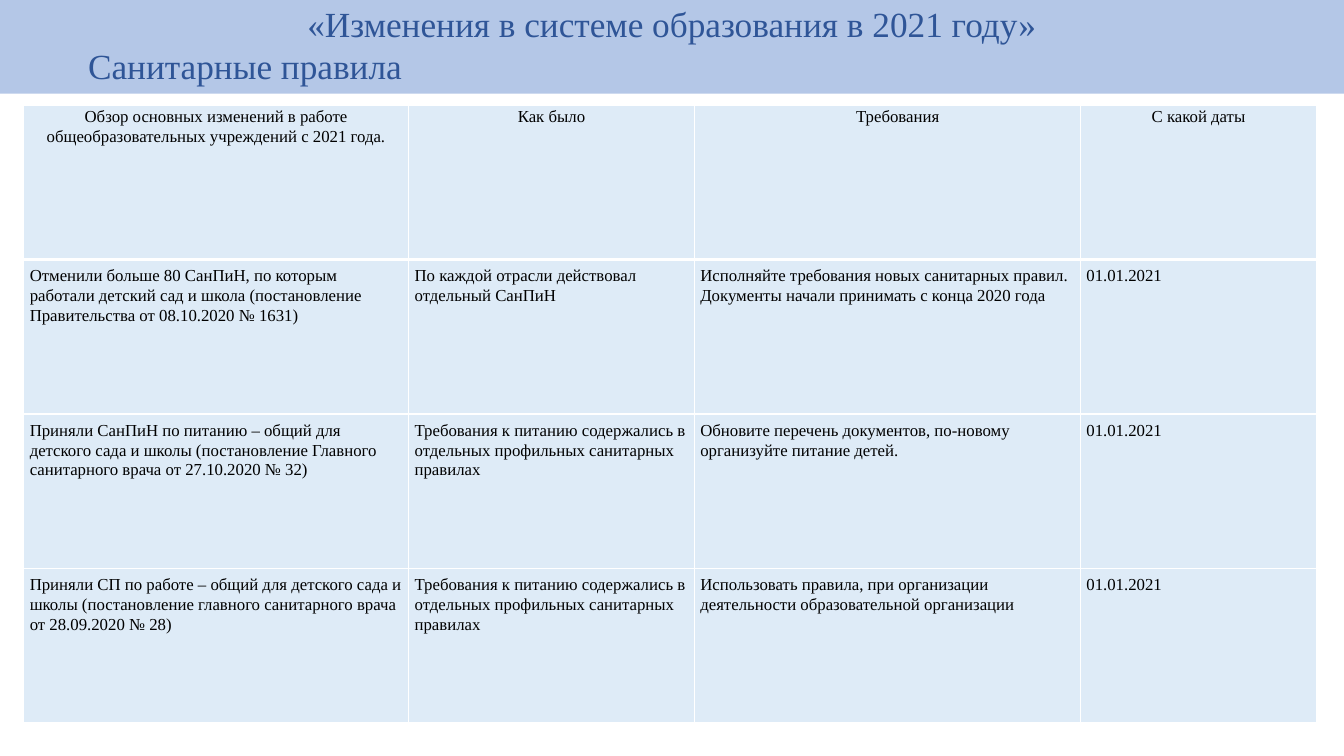
"""Builds a slide with a table of the 2021 changes to school sanitary rules."""
from lxml import etree
from pptx import Presentation
from pptx import util as u
from pptx.dml.color import RGBColor
from pptx.enum import shapes, text
from pptx.oxml.ns import qn

FONT = "Times New Roman"
BANNER, TITLE, CELL, BORDER, INK = "B4C7E7", "2F5597", "DEEBF7", "FFFFFF", "000000"
TITLE_LINES = [
    ("«Изменения в системе образования в 2021 году»", text.PP_ALIGN.CENTER, 0),
    ("Санитарные правила", text.PP_ALIGN.LEFT, 2.22),
]
HEADERS = [
    "Обзор основных изменений в работе общеобразовательных учреждений с 2021 года.",
    "Как было",
    "Требования",
    "С какой даты",
]
CHANGES = [
    ("Отменили больше 80 СанПиН, по которым работали детский сад и школа "
     "(постановление Правительства от 08.10.2020 № 1631)",
     "По каждой отрасли действовал отдельный СанПиН",
     "Исполняйте требования новых санитарных правил. Документы начали принимать с конца 2020 года",
     "01.01.2021"),
    ("Приняли СанПиН по питанию – общий для детского сада и школы "
     "(постановление Главного санитарного врача от 27.10.2020 № 32)",
     "Требования к питанию содержались в отдельных профильных санитарных правилах",
     "Обновите перечень документов, по-новому организуйте питание детей.",
     "01.01.2021"),
    ("Приняли СП по работе – общий для детского сада и школы "
     "(постановление главного санитарного врача от 28.09.2020 № 28)",
     "Требования к питанию содержались в отдельных профильных санитарных правилах",
     "Использовать правила, при организации деятельности образовательной организации",
     "01.01.2021"),
]
COLUMN_WIDTHS = [9.7, 7.2, 9.73, 5.95]
ROW_HEIGHT = 3.89
HEADER_INSET, BODY_INSET, SHIFTED_INSET = 0.03, 0.15, 0.55


def color(value):
    return RGBColor.from_string(value)


def fill(item, value):
    item.fill.solid()
    item.fill.fore_color.rgb = color(value)


def add_run(paragraph, words, size, value):
    run = paragraph.add_run()
    run.text = words
    run.font.name = FONT
    run.font.size = u.Pt(size)
    run.font.bold = False
    run.font.color.rgb = color(value)


def add_borders(cell, bottom):
    properties = cell._tc.get_or_add_tcPr()
    for side, width in (("L", 1), ("R", 1), ("T", 1), ("B", bottom)):
        line = etree.SubElement(properties, qn(f"a:ln{side}"), w=str(u.Pt(width)))
        solid = etree.SubElement(line, qn("a:solidFill"))
        etree.SubElement(solid, qn("a:srgbClr"), val=BORDER)


def add_banner(slide, width):
    shape = slide.shapes.add_shape(
        shapes.MSO_SHAPE.RECTANGLE, 0, u.Cm(-0.13), width, u.Cm(2.49))
    shape.shadow.inherit = False
    fill(shape, BANNER)
    shape.line.fill.background()
    frame = shape.text_frame
    frame.word_wrap = True
    frame.vertical_anchor = text.MSO_ANCHOR.MIDDLE
    frame.margin_left = frame.margin_right = frame.margin_top = frame.margin_bottom = 0
    for index, (words, alignment, indent) in enumerate(TITLE_LINES):
        paragraph = frame.add_paragraph() if index else frame.paragraphs[0]
        paragraph.alignment = alignment
        paragraph.line_spacing = u.Pt(30)
        paragraph._p.get_or_add_pPr().set("marL", str(u.Cm(indent)))
        add_run(paragraph, words, 25.2, TITLE)


def fill_cell(cell, words, is_header):
    inset = u.Cm(HEADER_INSET if is_header else BODY_INSET)
    cell.margin_left = cell.margin_right = cell.margin_top = cell.margin_bottom = inset
    add_borders(cell, 3 if is_header else 1)
    fill(cell, CELL)
    paragraph = cell.text_frame.paragraphs[0]
    paragraph.alignment = text.PP_ALIGN.CENTER if is_header else text.PP_ALIGN.LEFT
    paragraph.line_spacing = 1.07
    add_run(paragraph, words, 12, INK)


def add_changes_table(slide):
    rows = [HEADERS, *CHANGES]
    table = slide.shapes.add_table(
        len(rows), len(HEADERS), u.Cm(0.6), u.Cm(2.65),
        u.Cm(sum(COLUMN_WIDTHS)), u.Cm(ROW_HEIGHT * len(rows))).table
    table.horz_banding = False
    for column, width in zip(table.columns, COLUMN_WIDTHS):
        column.width = u.Cm(width)
    for row_index, row in enumerate(rows):
        table.rows[row_index].height = u.Cm(ROW_HEIGHT)
        for column_index, words in enumerate(row):
            fill_cell(table.cell(row_index, column_index), words, row_index == 0)
    table.cell(0, HEADERS.index("Требования")).margin_left = u.Cm(SHIFTED_INSET)


def main():
    presentation = Presentation()
    presentation.slide_width, presentation.slide_height = u.Cm(33.87), u.Cm(19.05)
    slide = presentation.slides.add_slide(presentation.slide_layouts[6])
    add_banner(slide, presentation.slide_width)
    add_changes_table(slide)
    presentation.save("out.pptx")


if __name__ == "__main__":
    main()
